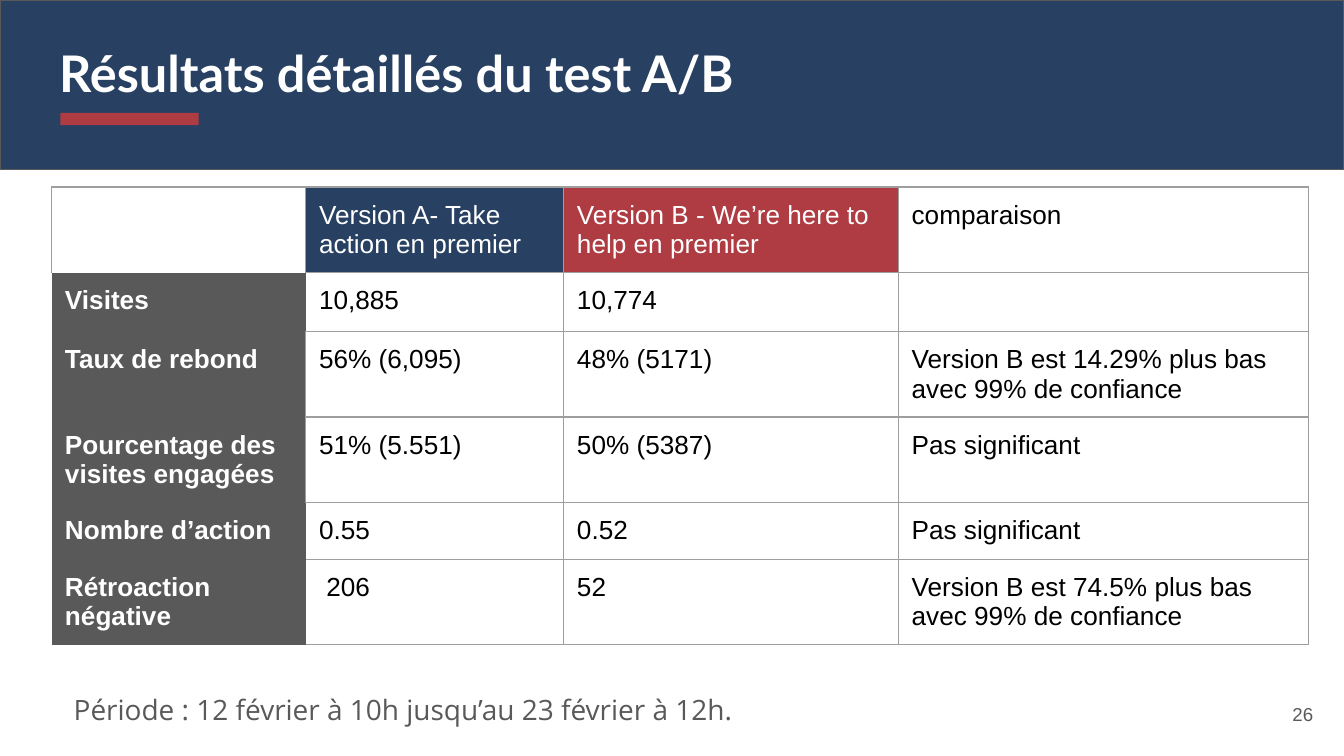
"""Build the slide with the detailed A/B test results."""
from dataclasses import dataclass

import pptx
import pptx.dml.color
import pptx.enum.shapes
import pptx.enum.text
import pptx.oxml.ns
import pptx.util
from lxml import etree

Pt = pptx.util.Pt
RGBColor = pptx.dml.color.RGBColor
Align = pptx.enum.text.PP_ALIGN
Anchor = pptx.enum.text.MSO_ANCHOR
qn = pptx.oxml.ns.qn

NAVY = RGBColor(0x28, 0x41, 0x62)
RED = RGBColor(0xAF, 0x3C, 0x43)
GRAY = RGBColor(0x59, 0x59, 0x59)
RULE = RGBColor(0x9E, 0x9E, 0x9E)
WHITE = RGBColor(0xFF, 0xFF, 0xFF)
BLACK = RGBColor(0x00, 0x00, 0x00)

INSET = Pt(7.2)
ROW_HEIGHT = 30.2
COLUMN_WIDTHS = (136.1, 138.2, 179.3, 219.6)


@dataclass(frozen=True)
class Area:
    left: float
    top: float
    width: float
    height: float

    def points(self) -> tuple:
        return Pt(self.left), Pt(self.top), Pt(self.width), Pt(self.height)


@dataclass(frozen=True)
class Measure:
    label: str
    version_a: str
    version_b: str
    comparison: str
    divided: bool = False


HEADINGS = (
    ("", None, BLACK),
    ("Version A- Take action en premier", NAVY, WHITE),
    ("Version B - We’re here to help en premier", RED, WHITE),
    ("comparaison", None, BLACK),
)
MEASURES = (
    Measure("Visites", "10,885", "10,774", ""),
    Measure("Taux de rebond", "56% (6,095)", "48% (5171)",
            "Version B est 14.29% plus bas avec 99% de confiance", divided=True),
    Measure("Pourcentage des visites engagées", "51% (5.551)", "50% (5387)",
            "Pas significant", divided=True),
    Measure("Nombre d’action", "0.55", "0.52", "Pas significant"),
    Measure("Rétroaction négative", " 206", "52",
            "Version B est 74.5% plus bas avec 99% de confiance"),
)


def write_text(frame, text: str, *, size: float, color: RGBColor, font: str = "Arial",
               bold: bool = False, align=Align.LEFT) -> None:
    para = frame.paragraphs[0]
    para.alignment = align
    if not text:
        etree.SubElement(para._p, qn("a:endParaRPr"), sz=str(int(size * 100)))
        return
    span = para.add_run()
    span.text = text
    span.font.name = font
    span.font.size = Pt(size)
    span.font.bold = bold
    span.font.color.rgb = color


def set_frame(frame, anchor=Anchor.TOP) -> None:
    frame.word_wrap = True
    frame.auto_size = pptx.enum.text.MSO_AUTO_SIZE.NONE
    frame.vertical_anchor = anchor
    frame.margin_left = frame.margin_right = INSET
    frame.margin_top = frame.margin_bottom = INSET


def add_block(page, area: Area, fill: RGBColor, line: RGBColor | None = None):
    block = page.shapes.add_shape(pptx.enum.shapes.MSO_SHAPE.RECTANGLE, *area.points())
    block.shadow.inherit = False
    block.fill.solid()
    block.fill.fore_color.rgb = fill
    if line is None:
        block.line.fill.background()
    else:
        block.line.color.rgb = line
        block.line.width = Pt(0.75)
    return block


def add_text(page, area: Area, text: str, *, anchor=Anchor.TOP, **style) -> None:
    box = page.shapes.add_textbox(*area.points())
    set_frame(box.text_frame, anchor)
    write_text(box.text_frame, text, **style)


def set_title(page, area: Area, text: str, **style) -> None:
    title = page.shapes.title
    title.left, title.top, title.width, title.height = area.points()
    set_frame(title.text_frame)
    write_text(title.text_frame, text, **style)


def set_borders(cell, edges: str) -> None:
    properties = cell._tc.get_or_add_tcPr()
    for edge in "LRTB":
        line = etree.SubElement(properties, qn(f"a:ln{edge}"), w=str(Pt(0.75)))
        if edge in edges:
            fill = etree.SubElement(line, qn("a:solidFill"))
            etree.SubElement(fill, qn("a:srgbClr"), val=str(RULE))
        else:
            etree.SubElement(line, qn("a:noFill"))


def fill_cell(cell, text: str, *, fill: RGBColor | None = None, color: RGBColor = BLACK,
              bold: bool = False, edges: str = "LRTB") -> None:
    cell.margin_left = cell.margin_right = INSET
    cell.margin_top = cell.margin_bottom = INSET
    set_borders(cell, edges)
    if fill is None:
        cell.fill.background()
    else:
        cell.fill.solid()
        cell.fill.fore_color.rgb = fill
    write_text(cell.text_frame, text, size=14, color=color, bold=bold)


def add_results(page, left: float, top: float) -> None:
    row_count = len(MEASURES) + 1
    area = Area(left, top, sum(COLUMN_WIDTHS), ROW_HEIGHT * row_count)
    table = page.shapes.add_table(row_count, len(COLUMN_WIDTHS), *area.points()).table
    table.first_row = table.horz_banding = False
    for column, width in zip(table.columns, COLUMN_WIDTHS):
        column.width = Pt(width)
    for row in table.rows:
        row.height = Pt(ROW_HEIGHT)
    for index, (text, fill, color) in enumerate(HEADINGS):
        fill_cell(table.cell(0, index), text, fill=fill, color=color,
                  edges="LRTB" if index else "LRT")
    for row, measure in enumerate(MEASURES, start=1):
        fill_cell(table.cell(row, 0), measure.label, fill=GRAY, color=WHITE, bold=True,
                  edges="R" if measure.divided else "")
        fill_cell(table.cell(row, 1), measure.version_a,
                  edges="LRTB" if measure.divided else "RTB")
        fill_cell(table.cell(row, 2), measure.version_b)
        fill_cell(table.cell(row, 3), measure.comparison)


def main() -> None:
    deck = pptx.Presentation()
    deck.slide_width, deck.slide_height = Pt(720), Pt(405)
    page = deck.slides.add_slide(deck.slide_layouts[5])
    banner = add_block(page, Area(0, 0, 720, 90.8), NAVY, GRAY)
    page.shapes.title.element.addprevious(banner.element)
    set_title(page, Area(24.5, 15.1, 669, 45.4), "Résultats détaillés du test A/B",
              size=27, color=WHITE, font="Lato", bold=True)
    add_block(page, Area(32.4, 60.4, 74, 6.6), RED)
    add_text(page, Area(667.4, 367.2, 43.2, 31), "26", anchor=Anchor.MIDDLE,
             size=10, color=GRAY, align=Align.RIGHT)
    add_results(page, 27.6, 100.2)
    add_text(page, Area(32.4, 363.6, 627.8, 27.4),
             "Période : 12 février à 10h jusqu’au 23 février à 12h.",
             size=15, color=GRAY, font="Open Sans")
    deck.save("out.pptx")


if __name__ == "__main__":
    main()
